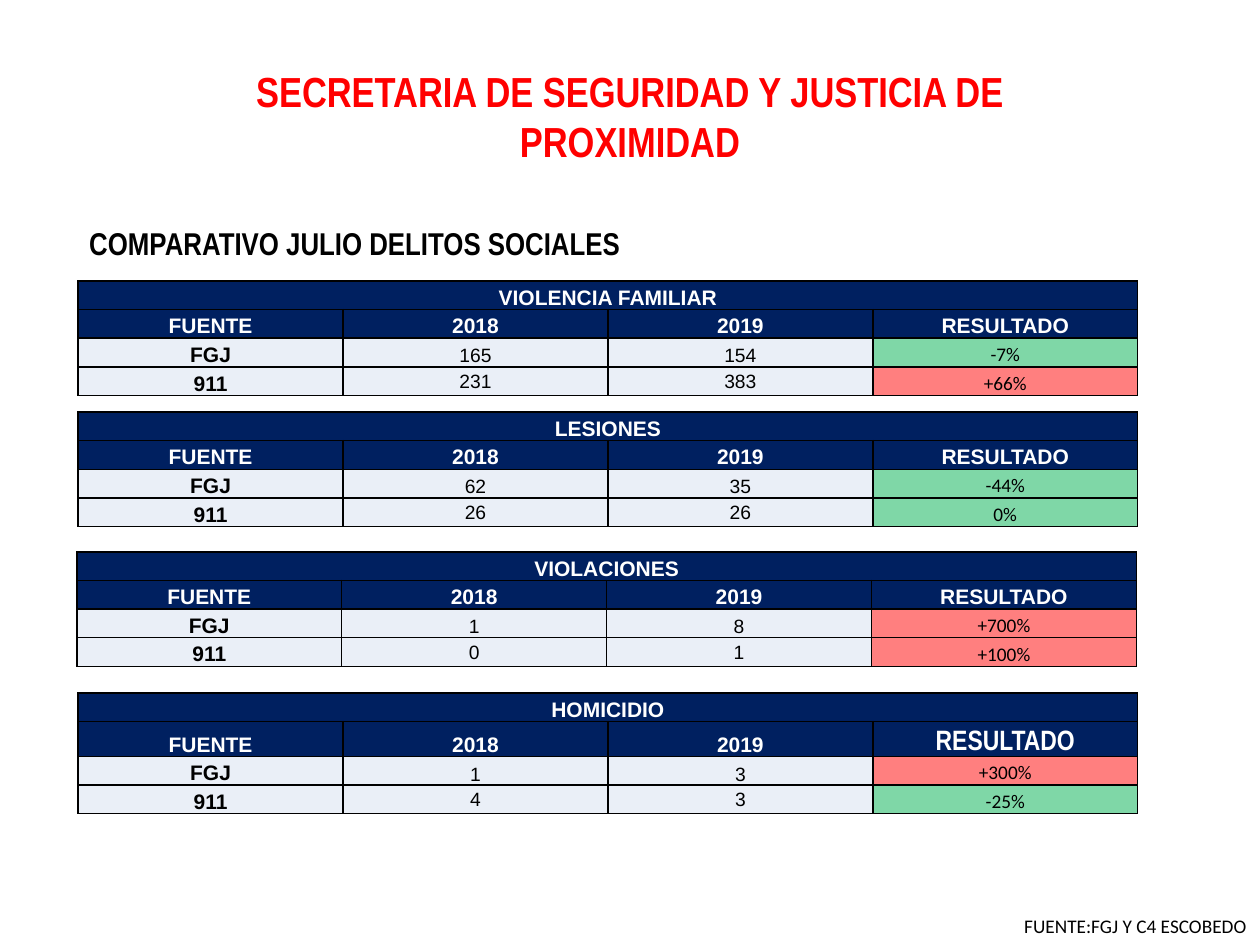
import dataclasses

import lxml.etree
import pptx
import pptx.dml.color
import pptx.enum.text
import pptx.oxml.ns
import pptx.util

ALIGN = pptx.enum.text.PP_ALIGN
ANCHOR = pptx.enum.text.MSO_ANCHOR
GRID_COLUMNS, GRID_ROWS = 100, 75


@dataclasses.dataclass(frozen=True)
class Theme:
    heading_font: str = "Arial Narrow"
    table_font: str = "Arial"
    result_font: str = "Calibri"
    title_size: int = 24
    subtitle_size: int = 18
    large_label_size: int = 16
    label_size: int = 12
    value_size: int = 11
    red: str = "FF0000"
    green: str = "00B050"
    navy: str = "002060"
    pale: str = "EAEFF7"
    white: str = "FFFFFF"
    black: str = "000000"
    border_width: int = 1
    result_alpha: int = 50


THEME = Theme()

CRIMES = [
    ("VIOLENCIA FAMILIAR", (6.2, 22.3, 84.1, 9.1), THEME.label_size,
     [("FGJ", "165", "154", "-7%"), ("911", "231", "383", "+66%")]),
    ("LESIONES", (6.2, 32.7, 84.1, 9.1), THEME.label_size,
     [("FGJ", "62", "35", "-44%"), ("911", "26", "26", "0%")]),
    ("VIOLACIONES", (6.1, 43.8, 84.1, 9.1), THEME.label_size,
     [("FGJ", "1", "8", "+700%"), ("911", "0", "1", "+100%")]),
    ("HOMICIDIO", (6.2, 55, 84.1, 9.1), THEME.large_label_size,
     [("FGJ", "1", "3", "+300%"), ("911", "4", "3", "-25%")]),
]
HEADERS = ("FUENTE", "2018", "2019", "RESULTADO")


def to_lengths(slide_size, box):
    width, height = slide_size
    left, top, columns, rows = box
    return (int(left * width / GRID_COLUMNS), int(top * height / GRID_ROWS),
            int(columns * width / GRID_COLUMNS), int(rows * height / GRID_ROWS))


def style_paragraph(paragraph, font_name, size, color, bold, align):
    paragraph.alignment = align
    font = paragraph.font
    font.name = font_name
    font.size = pptx.util.Pt(size)
    font.bold = bold
    font.color.rgb = pptx.dml.color.RGBColor.from_string(color)


def add_caption(slide, area, text, font_name, size, color, bold=False,
                align=ALIGN.LEFT, wrap=True):
    caption = slide.shapes.add_textbox(*area).text_frame
    caption.word_wrap = wrap
    caption.auto_size = pptx.enum.text.MSO_AUTO_SIZE.SHAPE_TO_FIT_TEXT
    caption.text = text
    style_paragraph(caption.paragraphs[0], font_name, size, color, bold, align)


def add_borders(cell):
    properties = cell._tc.get_or_add_tcPr()
    qn = pptx.oxml.ns.qn
    for side in ("a:lnL", "a:lnR", "a:lnT", "a:lnB"):
        border = lxml.etree.SubElement(
            properties, qn(side), w=str(pptx.util.Pt(THEME.border_width)))
        stroke = lxml.etree.SubElement(border, qn("a:solidFill"))
        lxml.etree.SubElement(stroke, qn("a:srgbClr"), val=THEME.black)


def fill_cell(cell, color, alpha=100):
    cell.fill.solid()
    cell.fill.fore_color.rgb = pptx.dml.color.RGBColor.from_string(color)
    if alpha < 100:
        shade = cell._tc.tcPr.find(".//" + pptx.oxml.ns.qn("a:solidFill") + "[last()]")
        shade = cell._tc.tcPr.find(pptx.oxml.ns.qn("a:solidFill"))[0]
        lxml.etree.SubElement(shade, pptx.oxml.ns.qn("a:alpha"), val=str(alpha * 1000))


def write_cell(cell, text, font_name, size, color, bold, anchor=ANCHOR.BOTTOM):
    cell.text = text
    cell.vertical_anchor = anchor
    cell.margin_left = cell.margin_right = cell.margin_top = pptx.util.Inches(0.01)
    cell.margin_bottom = 0
    style_paragraph(cell.text_frame.paragraphs[0], font_name, size, color, bold,
                    ALIGN.CENTER)


def add_crime_table(slide, area, crime, result_label_size, records):
    row_count, column_count = len(records) + 2, len(HEADERS)
    table = slide.shapes.add_table(row_count, column_count, *area).table
    table.first_row = table.horz_banding = False
    for column in table.columns:
        column.width = area[2] // column_count
    for row in table.rows:
        row.height = area[3] // row_count
    for cell in table.iter_cells():
        add_borders(cell)

    table.cell(0, 0).merge(table.cell(0, column_count - 1))
    write_cell(table.cell(0, 0), crime, THEME.table_font, THEME.label_size,
               THEME.white, True)
    for index, header in enumerate(HEADERS):
        fill_cell(table.cell(0, index), THEME.navy)
        fill_cell(table.cell(1, index), THEME.navy)
        is_result = index == column_count - 1
        size = result_label_size if is_result else THEME.label_size
        font_name = THEME.table_font if size == THEME.label_size else THEME.heading_font
        write_cell(table.cell(1, index), header, font_name, size, THEME.white, True)

    for row_index, (source, before, after, result) in enumerate(records, 2):
        source_cell, before_cell, after_cell, result_cell = table.rows[row_index].cells
        write_cell(source_cell, source, THEME.table_font, THEME.label_size,
                   THEME.black, True)
        anchor = ANCHOR.MIDDLE if source == "911" else ANCHOR.BOTTOM
        for cell, count in ((before_cell, before), (after_cell, after)):
            write_cell(cell, count, THEME.table_font, THEME.value_size,
                       THEME.black, False, anchor)
        for cell in (source_cell, before_cell, after_cell):
            fill_cell(cell, THEME.pale)
        write_cell(result_cell, result, THEME.result_font, THEME.value_size,
                   THEME.black, False)
        fill_cell(result_cell, THEME.red if result.startswith("+") else THEME.green,
                  THEME.result_alpha)


def main():
    presentation = pptx.Presentation()
    presentation.slide_width = pptx.util.Inches(10)
    presentation.slide_height = pptx.util.Inches(7.5)
    slide_size = presentation.slide_width, presentation.slide_height
    slide = presentation.slides.add_slide(presentation.slide_layouts[6])

    add_caption(slide, to_lengths(slide_size, (19, 4.7, 62, 9.1)),
                "SECRETARIA DE SEGURIDAD Y JUSTICIA DE PROXIMIDAD",
                THEME.heading_font, THEME.title_size, THEME.red, True, ALIGN.CENTER)
    add_caption(slide, to_lengths(slide_size, (6.1, 17.3, 73.8, 4)),
                "COMPARATIVO JULIO DELITOS SOCIALES",
                THEME.heading_font, THEME.subtitle_size, THEME.black, True)
    for crime, box, result_label_size, records in CRIMES:
        add_crime_table(slide, to_lengths(slide_size, box), crime,
                        result_label_size, records)
    add_caption(slide, to_lengths(slide_size, (80.3, 72.1, 19.8, 2.9)),
                "FUENTE:FGJ Y C4 ESCOBEDO", THEME.result_font, THEME.value_size,
                THEME.black, wrap=False)
    presentation.save("out.pptx")


if __name__ == "__main__":
    main()
